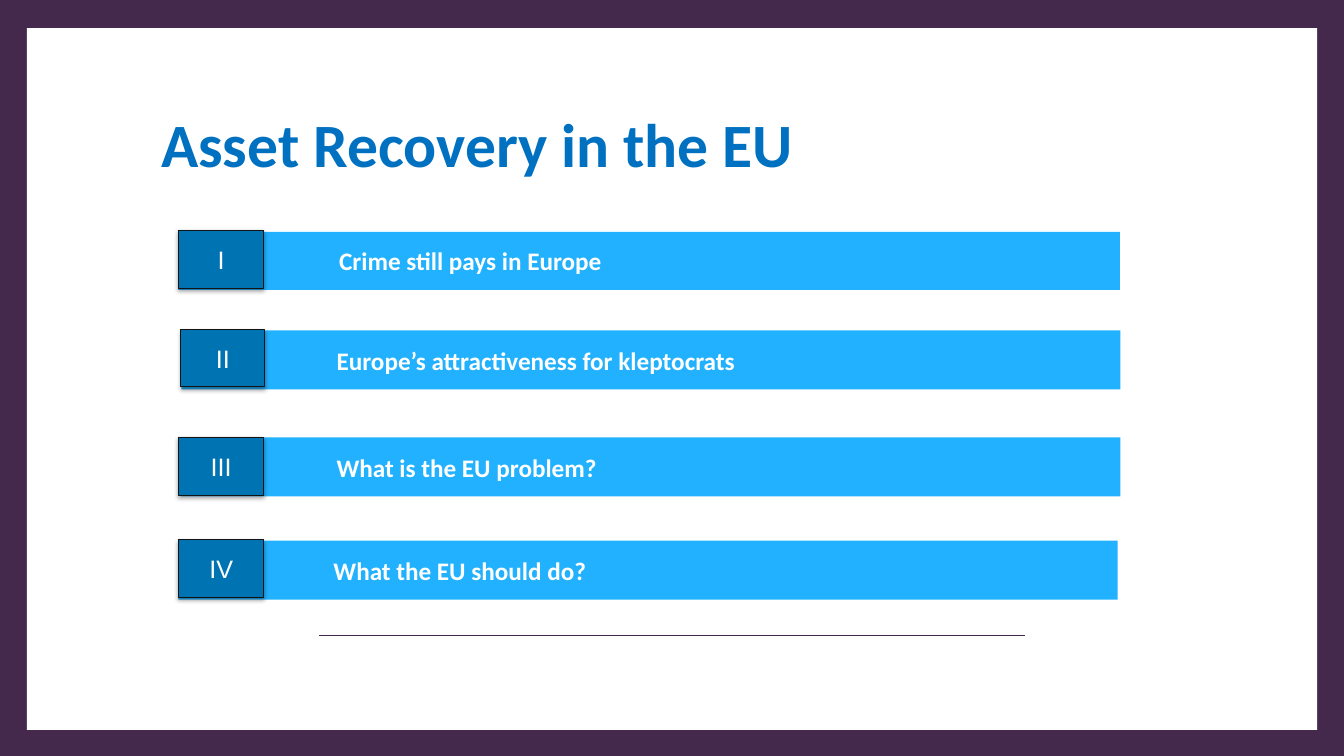
"""Build the agenda slide on asset recovery in the EU."""
from lxml import etree
from pptx import Presentation
from pptx.dml.color import RGBColor
from pptx.enum.shapes import MSO_CONNECTOR, MSO_SHAPE
from pptx.enum.text import MSO_ANCHOR, PP_ALIGN
from pptx.oxml.ns import qn
from pptx.util import Pt

RECT, STRAIGHT = MSO_SHAPE.RECTANGLE, MSO_CONNECTOR.STRAIGHT
MIDDLE = MSO_ANCHOR.MIDDLE
LEFT, CENTER = PP_ALIGN.LEFT, PP_ALIGN.CENTER

PURPLE = RGBColor(0x44, 0x29, 0x4D)
WHITE = RGBColor(0xFF, 0xFF, 0xFF)
OFF_WHITE = RGBColor(0xFF, 0xFF, 0xFE)
TITLE_BLUE = RGBColor(0x00, 0x70, 0xC0)
BAR_BLUE = RGBColor(0x22, 0xB1, 0xFF)
BADGE_BLUE = RGBColor(0x00, 0x74, 0xB2)
BADGE_EDGE = RGBColor(0x14, 0x13, 0x13)

WIDTH, HEIGHT = 960, 540
TITLE = "Asset Recovery in the EU"
# numeral, topic, bar (left, top, width, height), badge (same), text indent
AGENDA = [
    ("I", "Crime still pays in Europe",
     (127.4, 165.6, 672.6, 41.5), (127.4, 164.5, 61.2, 41.5), 114.9),
    ("II", "Europe’s attractiveness for kleptocrats",
     (129.6, 236, 670.7, 42.2), (129.3, 235.4, 59.8, 41), 110.8),
    ("III", "What is the EU problem?",
     (129.6, 312.4, 670.7, 42.2), (127.4, 312.2, 61.2, 41.5), 110.8),
    ("IV", "What the EU should do?",
     (127.4, 386.2, 671, 42.2), (127.4, 385.4, 61.2, 41.5), 110.8),
]


def add_rect(s, box, fill):
    sp = s.shapes.add_shape(RECT, *map(Pt, box))
    sp.shadow.inherit = False
    sp.fill.solid()
    sp.fill.fore_color.rgb = fill
    sp.line.fill.background()
    return sp


def write(sp, text, font, size, color, bold=False, align=LEFT, indent=7.2):
    tf = sp.text_frame
    tf.word_wrap = True
    tf.vertical_anchor = MIDDLE
    tf.margin_left = Pt(indent)
    p = tf.paragraphs[0]
    p.text = text
    p.alignment = align
    p.font.name, p.font.size, p.font.bold = font, Pt(size), bold
    p.font.color.rgb = color


def add_shadow(sp):
    effects = sp._element.spPr.find(qn("a:effectLst"))
    shadow = etree.SubElement(effects, qn("a:outerShdw"), blurRad=str(Pt(3.1)),
                              dist=str(Pt(1.8)), dir="5400000", rotWithShape="0")
    color = etree.SubElement(shadow, qn("a:srgbClr"), val="000000")
    etree.SubElement(color, qn("a:alpha"), val="35000")


def main():
    prs = Presentation()
    prs.slide_width, prs.slide_height = Pt(WIDTH), Pt(HEIGHT)
    s = prs.slides.add_slide(prs.slide_layouts[6])

    add_rect(s, (0, 0, WIDTH, HEIGHT), PURPLE)
    add_rect(s, (19.2, 20, 921.6, 501.3), WHITE)

    rule = s.shapes.add_connector(STRAIGHT, Pt(228), Pt(454), Pt(732), Pt(454))
    rule.line.color.rgb = PURPLE
    rule.line.width = Pt(0.5)
    etree.SubElement(rule._element.spPr, qn("a:effectLst"))

    title = s.shapes.add_textbox(Pt(108), Pt(50), Pt(840), Pt(104.4))
    write(title, TITLE, "Calibri", 44, TITLE_BLUE, bold=True)

    for numeral, topic, bar_box, badge_box, indent in AGENDA:
        bar = add_rect(s, bar_box, BAR_BLUE)
        write(bar, topic, "Calibri", 18, OFF_WHITE, bold=True, indent=indent)
        badge = add_rect(s, badge_box, BADGE_BLUE)
        badge.line.color.rgb = BADGE_EDGE
        badge.line.width = Pt(0.75)
        add_shadow(badge)
        write(badge, numeral, "Arial", 18, OFF_WHITE, align=CENTER)

    prs.save("out.pptx")


if __name__ == "__main__":
    main()
